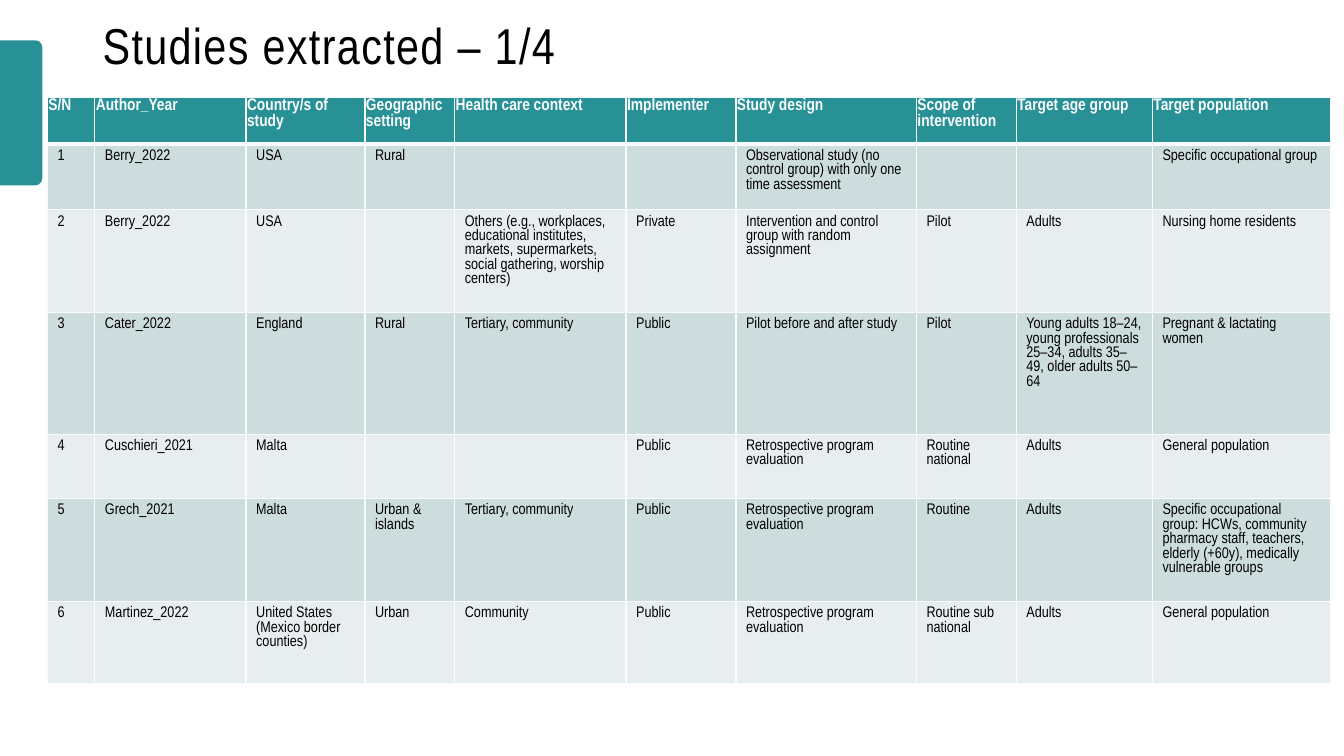
"""Build the slide that lists the first six extracted studies."""
from dataclasses import dataclass
from typing import Any

from lxml import etree
from pptx import Presentation
from pptx.dml.color import RGBColor
from pptx.enum.shapes import MSO_SHAPE
from pptx.enum.text import MSO_ANCHOR
from pptx.oxml.ns import qn
from pptx.util import Inches, Pt

TEAL = RGBColor(0x28, 0x91, 0x95)
PALE = RGBColor(0xFA, 0xFB, 0xFF)
DARK = RGBColor(0xCD, 0xDC, 0xDD)
LIGHT = RGBColor(0xE8, 0xEE, 0xEF)
BLACK = RGBColor(0, 0, 0)
TAB = MSO_SHAPE.ROUND_2_SAME_RECTANGLE
MIDDLE = MSO_ANCHOR.MIDDLE
WIDTH, HEIGHT = Inches(13.33), Inches(7.5)
FACE = "Arial Narrow"


@dataclass(frozen=True)
class Box:
    """Place on the slide, in percent of its width and height."""
    left: float
    top: float
    width: float
    height: float

    def place(self) -> tuple[int, int, int, int]:
        """Return the place in slide units."""
        return across(self.left), down(self.top), across(self.width), down(self.height)


@dataclass(frozen=True)
class Column:
    """Table column: heading and width in percent of the slide."""
    head: str
    width: float


@dataclass(frozen=True)
class Study:
    """Table row: height in percent of the slide and its entries."""
    height: float
    items: tuple[str, ...]


@dataclass(frozen=True)
class Look:
    """Format of one kind of table row."""
    font: dict[str, Any]
    cell: dict[str, Any]
    fill: RGBColor
    top: float
    bottom: float


TITLE = Box(6.9, -3.33, 86.27, 19.33)
MARKER = Box(-3.83, 12.13, 10.8, 5.6)
GRID = Box(3.53, 12.93, 95.5, 76.93)
HEAD_FONT = {"name": FACE, "size": Pt(12), "bold": True}
BODY_FONT = {"name": FACE, "size": Pt(11), "bold": False}
TITLE_FONT = {"name": FACE, "size": Pt(36)}
HEAD_CELL = {"margin_left": Inches(0.01), "margin_right": Inches(0.01),
             "margin_top": Inches(0.01), "margin_bottom": Inches(0.05)}
COLUMNS = (
    Column("S/N", 3.53),
    Column("Author_Year", 11.25),
    Column("Country/s of study", 8.85),
    Column("Geographic setting", 6.68),
    Column("Health care context", 12.75),
    Column("Implementer", 8.18),
    Column("Study design", 13.43),
    Column("Scope of intervention", 7.43),
    Column("Target age group", 10.13),
    Column("Target population", 13.28),
)
REVIEW = "Retrospective program evaluation"
STUDIES = (
    Study(8.53, ("1", "Berry_2022", "USA", "Rural", "", "",
                 "Observational study (no control group) with only one time assessment",
                 "", "", "Specific occupational group")),
    Study(13.33, ("2", "Berry_2022", "USA", "",
                  "Others (e.g., workplaces, educational institutes, markets, "
                  "supermarkets, social gathering, worship centers)", "Private",
                  "Intervention and control group with random assignment",
                  "Pilot", "Adults", "Nursing home residents")),
    Study(16.13, ("3", "Cater_2022", "England", "Rural", "Tertiary, community", "Public",
                  "Pilot before and after study", "Pilot",
                  "Young adults 18–24, young professionals 25–34, adults 35–49, "
                  "older adults 50–64", "Pregnant & lactating women")),
    Study(8.53, ("4", "Cuschieri_2021", "Malta", "", "", "Public", REVIEW,
                 "Routine national", "Adults", "General population")),
    Study(13.33, ("5", "Grech_2021", "Malta", "Urban & islands", "Tertiary, community",
                  "Public", REVIEW, "Routine", "Adults",
                  "Specific occupational group: HCWs, community pharmacy staff, "
                  "teachers, elderly (+60y), medically vulnerable groups")),
    Study(10.93, ("6", "Martinez_2022", "United States (Mexico border counties)", "Urban",
                  "Community", "Public", REVIEW, "Routine sub national", "Adults",
                  "General population")),
)


def across(share: float) -> int:
    """Turn a percentage of the slide width into a length."""
    return round(WIDTH * share / 100)


def down(share: float) -> int:
    """Turn a percentage of the slide height into a length."""
    return round(HEIGHT * share / 100)


def assign(item: Any, values: dict[str, Any]) -> None:
    """Set each named value on the item."""
    for name, value in values.items():
        setattr(item, name, value)


def write(para: Any, text: str, font: dict[str, Any], color: RGBColor) -> Any:
    """Add a formatted run to the paragraph."""
    run = para.add_run()
    run.text = text
    assign(run.font, font)
    run.font.color.rgb = color
    return run


def border(cell: Any, top: float, bottom: float) -> None:
    """Draw the four edges of a cell."""
    props = cell._tc.get_or_add_tcPr()
    for side, width in {"L": 1, "R": 1, "T": top, "B": bottom}.items():
        line = etree.SubElement(props, qn(f"a:ln{side}"), w=str(Pt(width)))
        fill = etree.SubElement(line, qn("a:solidFill"))
        etree.SubElement(fill, qn("a:srgbClr"), val=str(PALE))


def fill_cell(cell: Any, text: str, look: Look, color: RGBColor) -> None:
    """Format one table cell and write its text."""
    assign(cell, look.cell)
    border(cell, look.top, look.bottom)
    cell.fill.solid()
    cell.fill.fore_color.rgb = look.fill
    if text:
        write(cell.text_frame.paragraphs[0], text, look.font, color)


def add_marker(slide: Any) -> None:
    """Draw the rounded tab at the left edge."""
    shape = slide.shapes.add_shape(TAB, *MARKER.place())
    assign(shape, {"rotation": 90})
    shape.shadow.inherit = False
    shape.fill.solid()
    shape.fill.fore_color.rgb = TEAL
    shape.line.fill.background()


def add_title(slide: Any) -> None:
    """Write the slide title."""
    frame = slide.shapes.add_textbox(*TITLE.place()).text_frame
    assign(frame, {"word_wrap": True, "vertical_anchor": MIDDLE})
    para = frame.paragraphs[0]
    para.line_spacing = 0.9
    run = write(para, "Studies extracted – 1/4", TITLE_FONT, BLACK)
    run._r.get_or_add_rPr().set("spc", "100")


def add_grid(slide: Any) -> None:
    """Build the table of studies."""
    rows = (Study(6.13, tuple(col.head for col in COLUMNS)), *STUDIES)
    table = slide.shapes.add_table(len(rows), len(COLUMNS), *GRID.place()).table
    assign(table, {"first_row": False, "horz_banding": False})
    for col, item in zip(table.columns, COLUMNS):
        col.width = across(item.width)
    for index, study in enumerate(rows):
        table.rows[index].height = down(study.height)
        if index == 0:
            look, color = Look(HEAD_FONT, HEAD_CELL, TEAL, 1, 3), PALE
        else:
            shade = DARK if index % 2 else LIGHT
            look, color = Look(BODY_FONT, {}, shade, 3 if index == 1 else 1, 1), BLACK
        for cell, text in zip(table.rows[index].cells, study.items):
            fill_cell(cell, text, look, color)


def main() -> None:
    """Create and save the presentation."""
    deck = Presentation()
    assign(deck, {"slide_width": WIDTH, "slide_height": HEIGHT})
    slide = deck.slides.add_slide(deck.slide_layouts[6])
    add_marker(slide)
    add_title(slide)
    add_grid(slide)
    deck.save("out.pptx")


if __name__ == "__main__":
    main()
